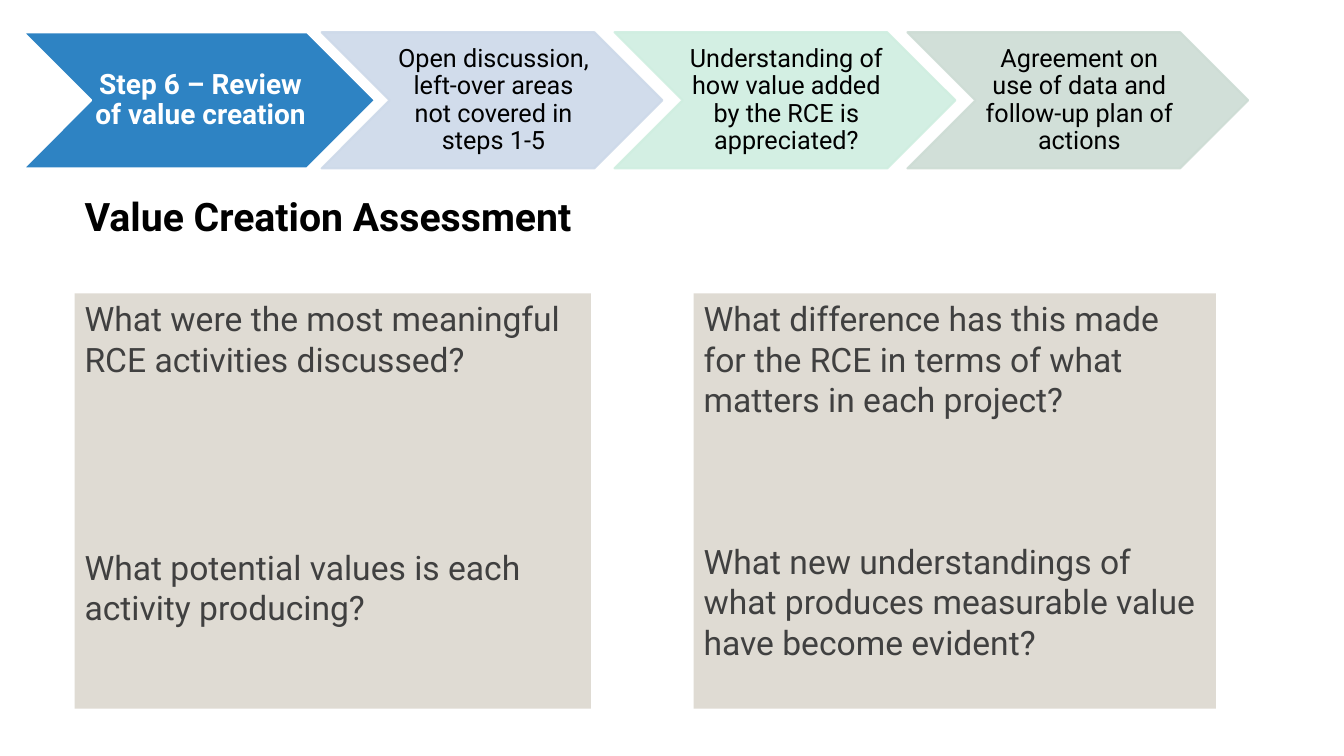
import pptx
import pptx.dml.color
import pptx.enum.shapes
import pptx.enum.text
import pptx.oxml
import pptx.oxml.ns
import pptx.util
from pptx.util import Inches

ANCHOR = pptx.enum.text.MSO_ANCHOR
ALIGN = pptx.enum.text.PP_ALIGN


def paint(color_format, color, alpha=100):
    color_format.rgb = pptx.dml.color.RGBColor.from_string(color)
    if alpha < 100:
        namespace = pptx.oxml.ns.nsdecls("a")
        for clr in color_format._xFill.iter(pptx.oxml.ns.qn("a:srgbClr")):
            clr.append(pptx.oxml.parse_xml(
                f'<a:alpha {namespace} val="{alpha * 1000}"/>'))


def add_text(paragraph, text, size, color, bold=False):
    run = paragraph.add_run()
    run.text = text
    run.font.name = "Roboto"
    run.font.size = pptx.util.Pt(size)
    run.font.bold = bold
    paint(run.font.color, color)


deck = pptx.Presentation()
deck.slide_width, deck.slide_height = Inches(13.33), Inches(7.5)
slide = deck.slides.add_slide(deck.slide_layouts[5])

# Heading
heading = slide.shapes.title
heading.left, heading.top = Inches(0.74), Inches(1.86)
heading.width, heading.height = Inches(6.62), Inches(0.57)
heading.text_frame.vertical_anchor = ANCHOR.TOP
heading.text_frame.auto_size = pptx.enum.text.MSO_AUTO_SIZE.NONE
heading_line = heading.text_frame.paragraphs[0]
heading_line.alignment = ALIGN.LEFT
add_text(heading_line, "Value Creation Assessment", 28, "000000", True)

# Question panels: left, width, gap between the questions in points, questions
panels = [
    (0.74, 5.12, 120, ["What were the most meaningful RCE activities discussed?",
                       "What potential values is each activity producing?"]),
    (6.88, 5.18, 87, ["What difference has this made for the RCE in terms of what matters in each project?",
                      "What new understandings of what produces measurable value have become evident?"]),
]
for left, width, gap, questions in panels:
    panel = slide.shapes.add_shape(
        pptx.enum.shapes.MSO_SHAPE.RECTANGLE,
        Inches(left), Inches(2.91), Inches(width), Inches(4.12))
    panel.shadow.inherit = False
    panel.fill.solid()
    paint(panel.fill.fore_color, "DFDBD3")
    panel.line.fill.background()
    frame = panel.text_frame
    frame.word_wrap = True
    frame.vertical_anchor = ANCHOR.TOP
    for number, question in enumerate(questions):
        paragraph = frame.add_paragraph() if number else frame.paragraphs[0]
        paragraph.alignment = ALIGN.LEFT
        paragraph.space_before = pptx.util.Pt(gap * number)
        add_text(paragraph, question, 24, "404040")

# Step banner: left, width, fill, line, opacity, text, size, text colour
first_topic, topic_pitch = 3.19, 2.905
topics = [
    ("CDD9E9", "Open discussion, left-over areas not covered in steps 1-5"),
    ("CFEEE0", "Understanding of how value added by the RCE is appreciated?"),
    ("CDDCD4", "Agreement on use of data and follow-up plan of actions"),
]
chevrons = [(0.23, 3.49, "2E83C3", "FFFFFF", 100,
             "Step 6 – Review of value creation", 20, "FFFFFF")]
for index, (color, topic) in enumerate(topics):
    chevrons.append((first_topic + index * topic_pitch, 3.38, color, color, 90,
                     topic, 18, "000000"))

for left, width, fill, outline, opacity, text, size, ink in chevrons:
    chevron = slide.shapes.add_shape(
        pptx.enum.shapes.MSO_SHAPE.CHEVRON,
        Inches(left), Inches(0.32), Inches(width), Inches(1.35))
    chevron.shadow.inherit = False
    chevron.fill.solid()
    paint(chevron.fill.fore_color, fill, opacity)
    chevron.line.width = pptx.util.Pt(1.5)
    chevron.line.fill.solid()
    paint(chevron.line.fill.fore_color, outline, opacity)
    frame = chevron.text_frame
    frame.word_wrap = True
    frame.vertical_anchor = ANCHOR.MIDDLE
    frame.margin_left, frame.margin_right = Inches(0.03), Inches(0)
    frame.margin_top = frame.margin_bottom = Inches(0.01)
    paragraph = frame.paragraphs[0]
    paragraph.alignment = ALIGN.CENTER
    paragraph.line_spacing = 0.9
    add_text(paragraph, text, size, ink, bold=size == 20)

deck.save("out.pptx")
